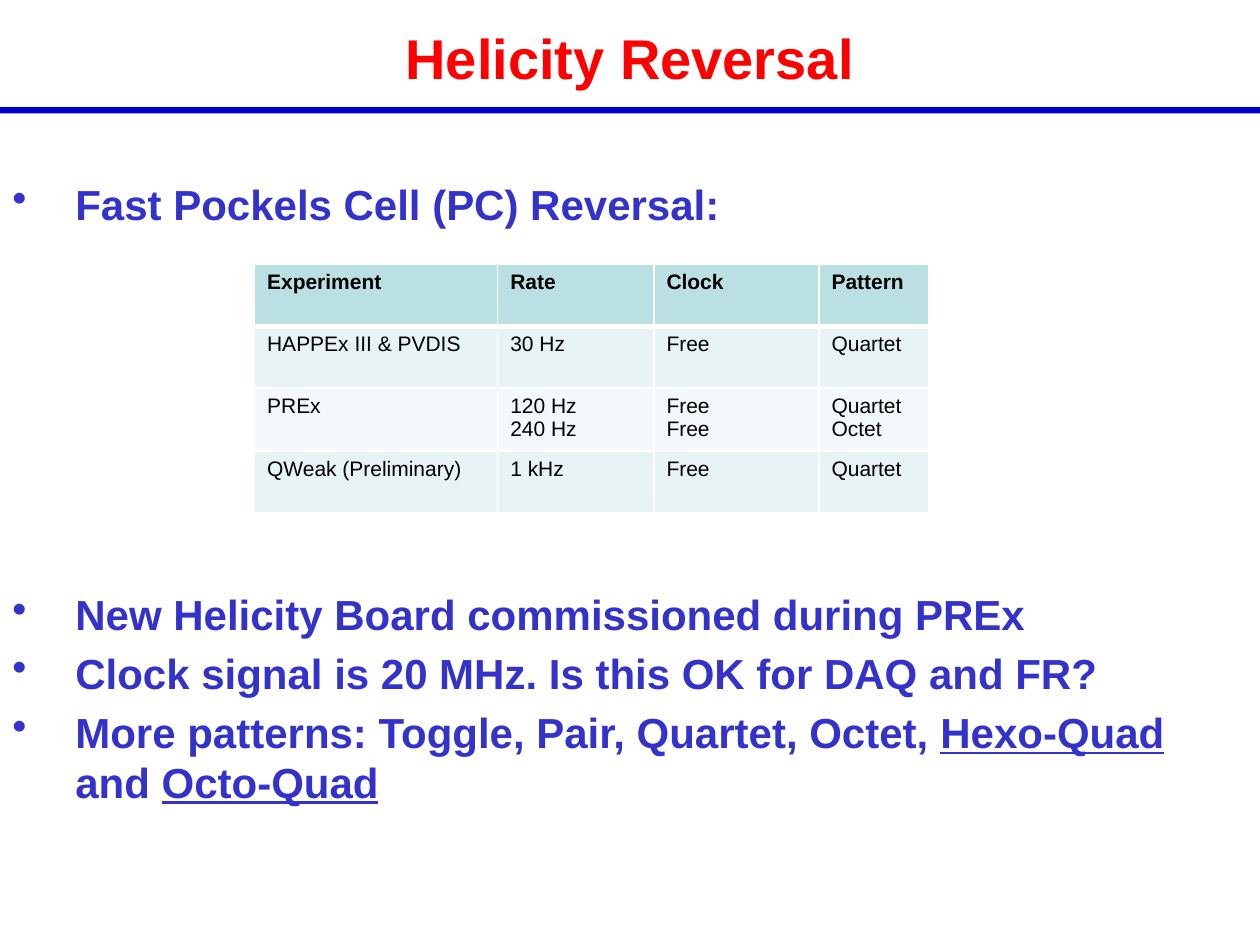
from pptx import Presentation
from pptx.dml.color import RGBColor
from pptx.enum.shapes import MSO_SHAPE
from pptx.enum.text import MSO_ANCHOR, PP_ALIGN
from pptx.oxml import parse_xml
from pptx.oxml.ns import nsdecls
from pptx.util import Inches, Pt

RECTANGLE = MSO_SHAPE.RECTANGLE
MIDDLE = MSO_ANCHOR.MIDDLE
CENTER = PP_ALIGN.CENTER

COLORS = {
    "title": "FF0000",
    "rule": "0000CC",
    "bullet": "3333CC",
    "cell_text": "000000",
    "border": "FFFFFF",
    "header": "BBE0E3",
    "odd_row": "E7F3F4",
    "even_row": "F3F9FA",
}


class HelicitySlide:
    font_name = "Arial"

    def __init__(self, slide):
        self.slide = slide

    def style(self, paragraph, size, color, bold=True):
        font = paragraph.font
        font.name = self.font_name
        font.size = Pt(size)
        font.bold = bold
        font.color.rgb = RGBColor.from_string(COLORS[color])

    def frame(self, left, top, width, height):
        box = self.slide.shapes.add_textbox(
            Inches(left), Inches(top), Inches(width), Inches(height))
        box.text_frame.word_wrap = True
        return box.text_frame

    def rule(self, left, top, width, height):
        bar = self.slide.shapes.add_shape(
            RECTANGLE, Inches(left), Inches(top), Inches(width), Inches(height))
        bar.shadow.inherit = False
        bar.fill.solid()
        bar.fill.fore_color.rgb = RGBColor.from_string(COLORS["rule"])
        bar.line.fill.background()

    def title(self, text, left, top, width, height):
        frame = self.frame(left, top, width, height)
        frame.vertical_anchor = MIDDLE
        heading = frame.paragraphs[0]
        heading.text = text
        heading.alignment = CENTER
        self.style(heading, 32, "title")

    def bullets(self, items, left, top, width, height):
        frame = self.frame(left, top, width, height)
        for index, runs in enumerate(items):
            item = frame.add_paragraph() if index else frame.paragraphs[0]
            properties = item._p.get_or_add_pPr()
            properties.set("marL", str(Inches(0.5)))
            properties.set("indent", str(-Inches(0.5)))
            properties.append(parse_xml(f'<a:buChar {nsdecls("a")} char="•"/>'))
            item.line_spacing = Pt(28.5)
            if index:
                item.space_before = Pt(5)
            self.style(item, 24, "bullet")
            for text, underlined in runs:
                run = item.add_run()
                run.text = text
                if underlined:
                    run.font.underline = True

    def borders(self, cell, widths):
        properties = cell._tc.get_or_add_tcPr()
        for side, width in widths.items():
            properties.append(parse_xml(
                f'<a:ln{side} {nsdecls("a")} w="{Pt(width)}"><a:solidFill>'
                f'<a:srgbClr val="{COLORS["border"]}"/></a:solidFill></a:ln{side}>'))

    def table(self, rows, column_widths, row_height, left, top):
        grid = self.slide.shapes.add_table(
            len(rows), len(column_widths), Inches(left), Inches(top),
            Inches(sum(column_widths)), Inches(row_height * len(rows))).table
        for column, width in zip(grid.columns, column_widths):
            column.width = Inches(width)
        for row_index, row in enumerate(rows):
            is_header = row_index == 0
            fill = "header" if is_header else "odd_row" if row_index % 2 else "even_row"
            top_width = 3 if row_index == 1 else 1
            bottom_width = 3 if is_header else 1
            for column_index, text in enumerate(row):
                cell = grid.cell(row_index, column_index)
                cell.text = text
                for paragraph in cell.text_frame.paragraphs:
                    self.style(paragraph, 12, "cell_text", bold=is_header)
                self.borders(cell, {"L": 1, "R": 1, "T": top_width, "B": bottom_width})
                cell.fill.solid()
                cell.fill.fore_color.rgb = RGBColor.from_string(COLORS[fill])


def main():
    presentation = Presentation()
    presentation.slide_width = Inches(10)
    presentation.slide_height = Inches(7.5)
    page = HelicitySlide(presentation.slides.add_slide(presentation.slide_layouts[6]))

    page.rule(0, 0.85, 10, 0.05)
    page.bullets([[("Fast Pockels Cell (PC) Reversal:", False)]], 0, 1.37, 10, 0.5)
    page.bullets([
        [("New Helicity Board commissioned during PREx", False)],
        [("Clock signal is 20 MHz. Is this OK for DAQ and FR?", False)],
        [("More patterns: Toggle, Pair, Quartet, Octet, ", False),
         ("Hexo-Quad", True), (" and ", False), ("Octo-Quad", True)],
    ], 0, 4.63, 10, 2.34)
    page.table([
        ["Experiment", "Rate", "Clock", "Pattern"],
        ["HAPPEx III & PVDIS", "30 Hz", "Free", "Quartet"],
        ["PREx", "120 Hz\n240 Hz", "Free\nFree", "Quartet\nOctet"],
        ["QWeak (Preliminary)", "1 kHz", "Free", "Quartet"],
    ], [1.93, 1.24, 1.31, 0.87], 0.49, 2.02, 2.1)
    page.title("Helicity Reversal", 0, 0.08, 10, 0.75)

    presentation.save("out.pptx")


if __name__ == "__main__":
    main()
